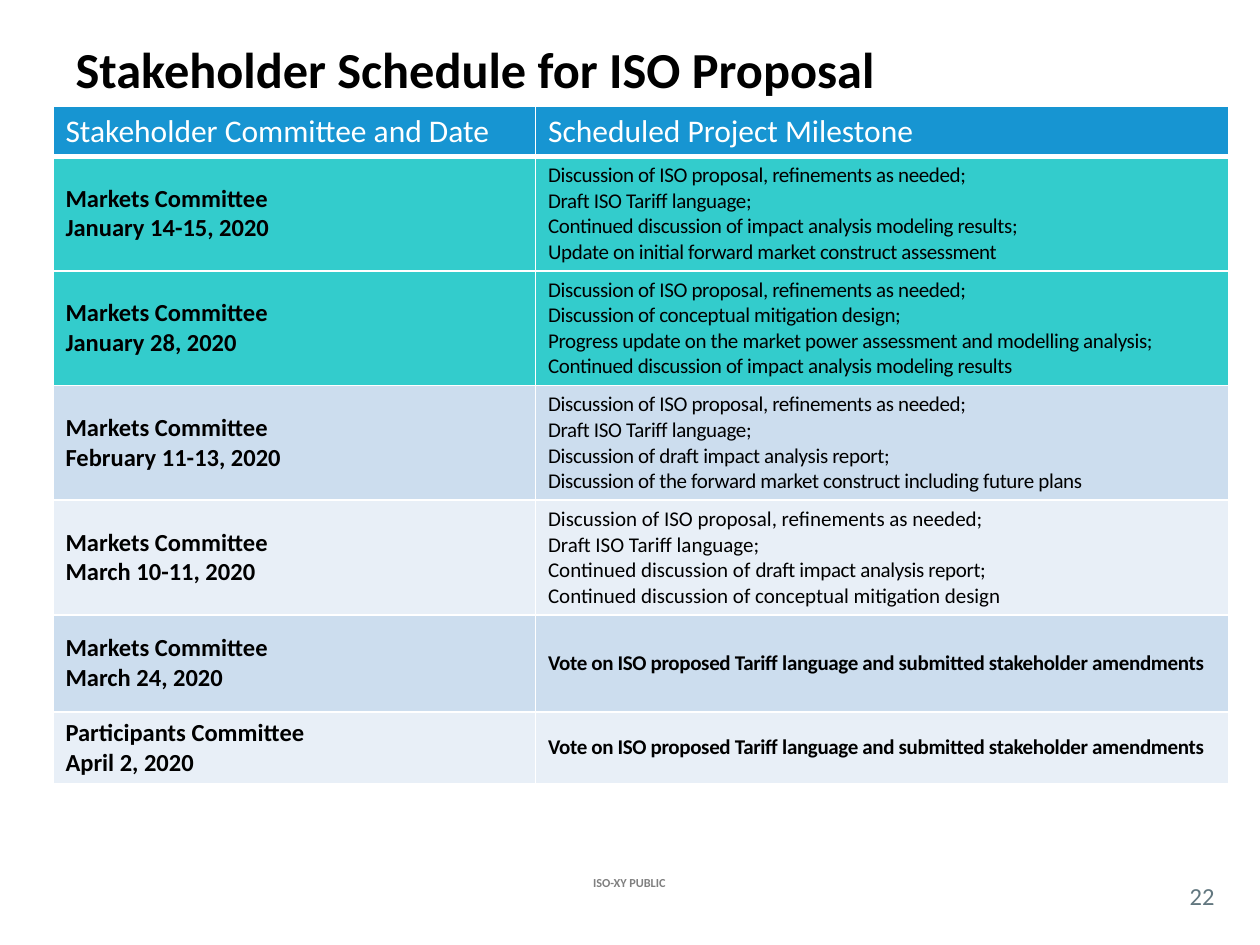
import pptx
import pptx.dml.color
import pptx.enum.text
import pptx.oxml
import pptx.oxml.ns
import pptx.util
from pptx.util import Inches

FONT = "Calibri"
COLORS = {
    "header": "1795D2",
    "teal": "33CCCC",
    "blue": "CCDDEE",
    "pale": "E8EFF7",
    "white": "FFFFFF",
    "black": "000000",
    "footer": "808080",
    "number": "62777F",
}
NORMAL, TIGHT = 0, -0.2  # character spacing in points
REFINEMENTS = "Discussion of ISO proposal, refinements as needed;"
DRAFT_TARIFF = "Draft ISO Tariff language;"
VOTE = "Vote on ISO proposed Tariff language and submitted stakeholder amendments"


def tight(*lines):
    """One paragraph per line, each a single condensed run."""
    return [[(line, TIGHT)] for line in lines]


# committee, date, milestone paragraphs, fill, row height, bold milestone
MEETINGS = [
    ("Markets Committee", "January 14-15, 2020",
     tight(REFINEMENTS, DRAFT_TARIFF,
           "Continued discussion of impact analysis modeling results;",
           "Update on initial forward market construct assessment"),
     "teal", 0.91, False),
    ("Markets Committee", "January 28, 2020",
     tight(REFINEMENTS, "Discussion of conceptual mitigation design;",
           "Progress update on the market power assessment and modelling analysis;",
           "Continued discussion of impact analysis modeling results"),
     "teal", 0.91, False),
    ("Markets Committee", "February 11-13, 2020",
     tight(REFINEMENTS, DRAFT_TARIFF,
           "Discussion of draft impact analysis report;",
           "Discussion of the forward market construct including future plans"),
     "blue", 0.91, False),
    ("Markets Committee", "March 10-11, 2020",
     [[(REFINEMENTS, NORMAL)],
      [(DRAFT_TARIFF, NORMAL)],
      [("Continued discussion of ", NORMAL), ("draft impact analysis report;", TIGHT)],
      [("Continued discussion of conceptual mitigation design", NORMAL)]],
     "pale", 0.91, False),
    ("Markets Committee", "March 24, 2020", tight(VOTE), "blue", 0.77, True),
    ("Participants Committee", "April 2, 2020", tight(VOTE), "pale", 0.56, True),
]


def rgb(name):
    return pptx.dml.color.RGBColor.from_string(COLORS[name])


def format_run(run, size, color, bold=False, spacing=NORMAL):
    run.font.name = FONT
    run.font.size = pptx.util.Pt(size)
    run.font.bold = bold
    run.font.color.rgb = rgb(color)
    if spacing:
        run.font._element.set("spc", str(round(spacing * 100)))


def add_title(slide, text):
    title = slide.shapes.title
    title.left, title.top = Inches(0.5), Inches(0.25)
    title.width, title.height = Inches(9), Inches(0.58)
    frame = title.text_frame
    frame.text = text
    frame.auto_size = pptx.enum.text.MSO_AUTO_SIZE.NONE
    frame.vertical_anchor = pptx.enum.text.MSO_ANCHOR.MIDDLE
    frame.paragraphs[0].alignment = pptx.enum.text.PP_ALIGN.LEFT
    format_run(frame.paragraphs[0].runs[0], 28.8, "black", bold=True)


def add_label(slide, text, left, top, width, height, size, color, bold=False, inset=0):
    label = slide.shapes.add_textbox(Inches(left), Inches(top), Inches(width), Inches(height))
    frame = label.text_frame
    frame.word_wrap = True
    frame.vertical_anchor = pptx.enum.text.MSO_ANCHOR.MIDDLE
    frame.margin_left = frame.margin_right = Inches(inset)
    frame.margin_top = frame.margin_bottom = Inches(inset / 2)
    frame.text = text
    frame.paragraphs[0].alignment = pptx.enum.text.PP_ALIGN.CENTER
    format_run(frame.paragraphs[0].runs[0], size, color, bold)


def set_borders(cell, bottom=1):
    """White borders, 1 pt wide except for the bottom one if given."""
    properties = cell._tc.get_or_add_tcPr()
    widths = {"lnL": 1, "lnR": 1, "lnT": 1, "lnB": bottom}
    for position, (side, width) in enumerate(widths.items()):
        properties.insert(position, pptx.oxml.parse_xml(
            f'<a:{side} {pptx.oxml.ns.nsdecls("a")} w="{pptx.util.Pt(width)}">'
            f'<a:solidFill><a:srgbClr val="{COLORS["white"]}"/></a:solidFill></a:{side}>'))


def fill_cell(cell, paragraphs, fill, size, color="black", bold=False, bottom=1):
    cell.fill.solid()
    cell.fill.fore_color.rgb = rgb(fill)
    cell.vertical_anchor = pptx.enum.text.MSO_ANCHOR.MIDDLE
    cell.margin_left = cell.margin_right = Inches(0.1)
    cell.margin_top = cell.margin_bottom = Inches(0.05)
    set_borders(cell, bottom)
    frame = cell.text_frame
    for index, pieces in enumerate(paragraphs):
        paragraph = frame.add_paragraph() if index else frame.paragraphs[0]
        for text, spacing in pieces:
            run = paragraph.add_run()
            run.text = text
            format_run(run, size, color, bold, spacing)


def add_schedule(slide):
    heights = [0.39] + [meeting[4] for meeting in MEETINGS]
    schedule = slide.shapes.add_table(
        len(heights), 2, Inches(0.42), Inches(0.84), Inches(9.33), Inches(sum(heights))).table
    schedule.columns[0].width = Inches(3.83)
    schedule.columns[1].width = Inches(5.5)
    for row, height in zip(schedule.rows, heights):
        row.height = Inches(height)

    headings = ("Stakeholder Committee and Date", "Scheduled Project Milestone")
    for column, heading in enumerate(headings):
        fill_cell(schedule.cell(0, column), [[(heading, NORMAL)]], "header", 18, "white", bottom=3)
    for row, (committee, date, milestones, fill, _, bold) in enumerate(MEETINGS, start=1):
        fill_cell(schedule.cell(row, 0), [[(committee, NORMAL)], [(date, NORMAL)]],
                  fill, 14, bold=True)
        fill_cell(schedule.cell(row, 1), milestones, fill, 12, bold=bold)


def main():
    presentation = pptx.Presentation()
    presentation.slide_width, presentation.slide_height = Inches(10), Inches(7.5)
    slide = presentation.slides.add_slide(presentation.slide_layouts[5])
    add_label(slide, "ISO-XY PUBLIC", 4.26, 6.87, 1.47, 0.27, 7, "footer", bold=True, inset=0.1)
    add_title(slide, "Stakeholder Schedule for ISO Proposal")
    add_label(slide, "22", 9.33, 6.96, 0.42, 0.29, 14, "number")
    add_schedule(slide)
    presentation.save("out.pptx")


if __name__ == "__main__":
    main()
